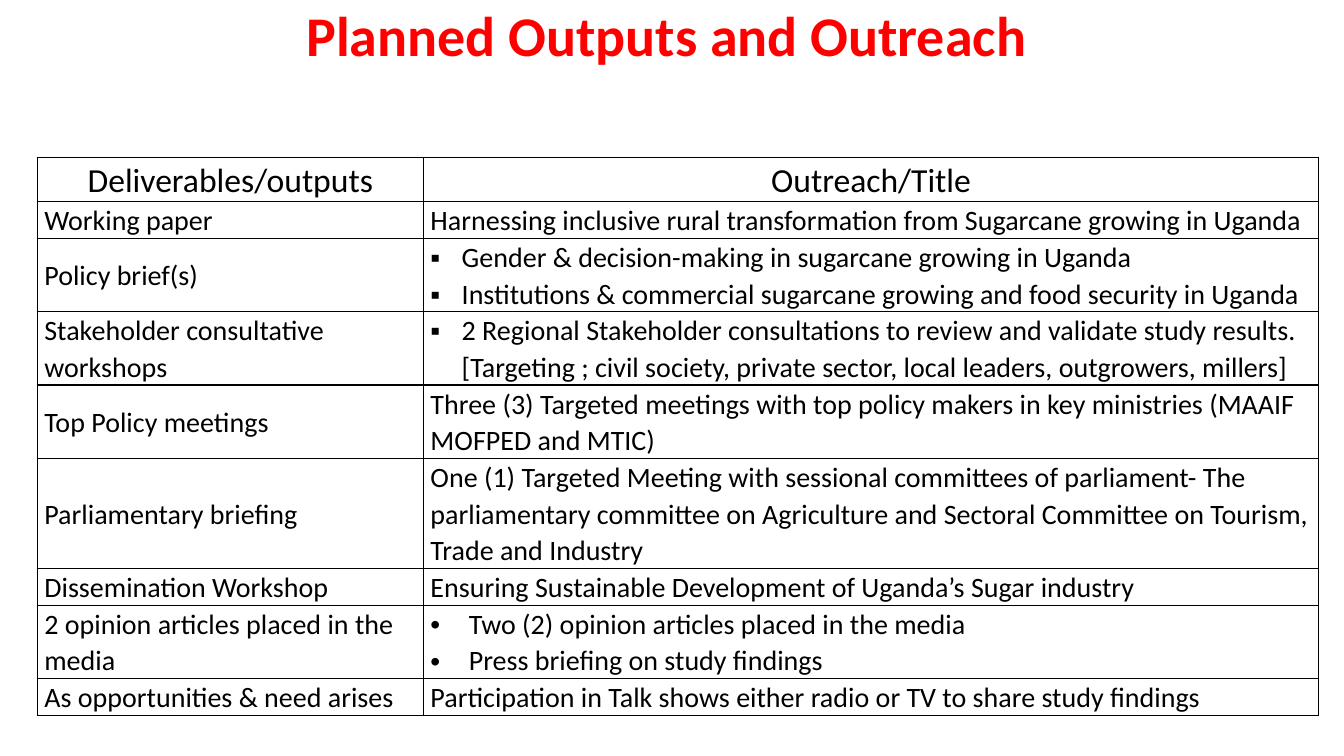
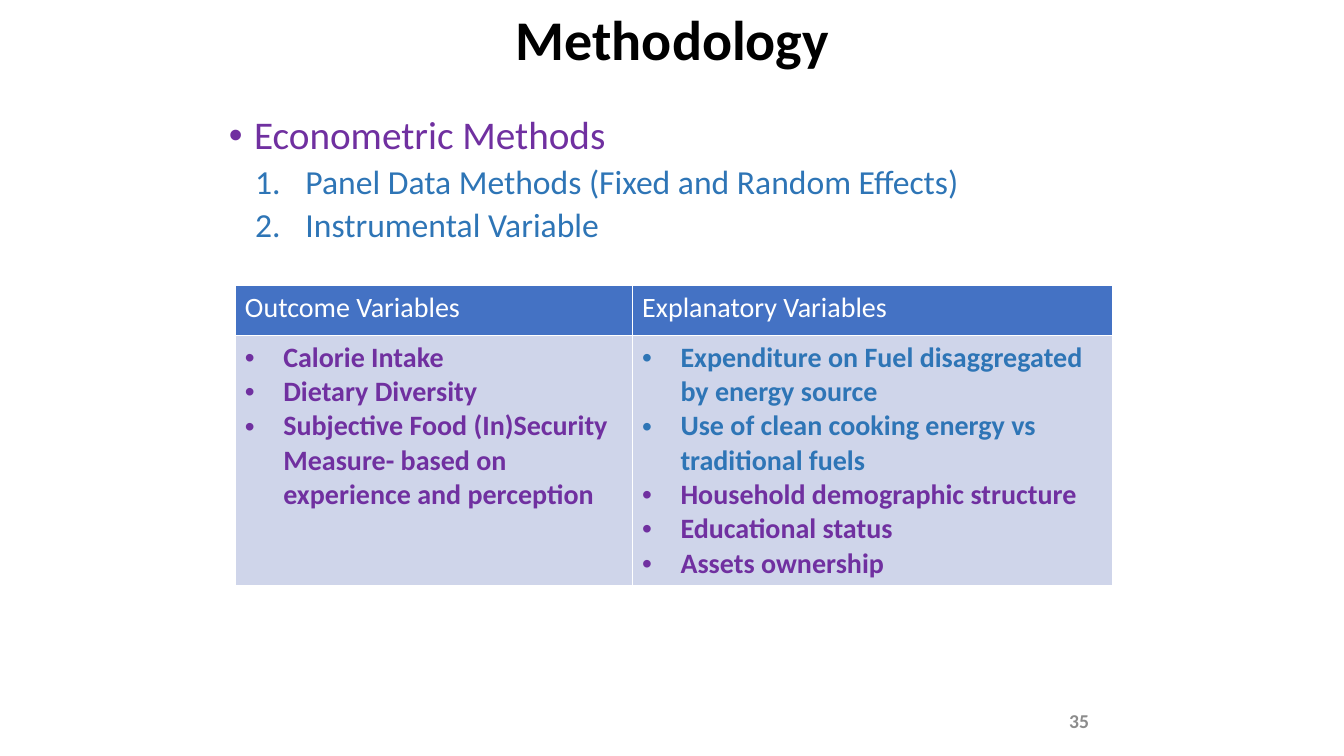
from dataclasses import dataclass

from lxml.etree import SubElement
from pptx import Presentation
from pptx.dml.color import RGBColor
from pptx.enum.text import MSO_ANCHOR, MSO_AUTO_SIZE, PP_ALIGN
from pptx.oxml.ns import qn
from pptx.util import Emu, Pt

EMU_PER_PX = 9144


@dataclass(frozen=True)
class Theme:
    font: str = "Calibri"
    black: str = "000000"
    white: str = "FFFFFF"
    red: str = "FF0000"
    purple: str = "7030A0"
    blue: str = "2E75B6"
    header_fill: str = "4472C4"
    body_fill: str = "CFD5EA"
    grey: str = "8C8C8C"
    title_size: int = 40
    list_size: int = 28
    heading_size: int = 24
    text_size: int = 20
    number_size: int = 14


THEME = Theme()


def px(length):
    return Emu(length * EMU_PER_PX)


def place(shape, left, top, width, height):
    shape.left, shape.top = px(left), px(top)
    shape.width, shape.height = px(width), px(height)


def set_bullet(para, bullet, indent, hanging):
    properties = para._p.get_or_add_pPr()
    properties.set("marL", str(px(indent)))
    properties.set("indent", str(px(-hanging)))
    if bullet == "1.":
        SubElement(properties, qn("a:buFont"), typeface="+mj-lt")
        SubElement(properties, qn("a:buAutoNum"), type="arabicPeriod")
    else:
        SubElement(properties, qn("a:buFont"), typeface="Arial")
        SubElement(properties, qn("a:buChar"), char=bullet)


def write_text(para, text, size=THEME.text_size, color=THEME.black, bold=False,
               align=PP_ALIGN.LEFT, spacing=1.0, before=0, level=0,
               bullet=None, indent=38, hanging=38):
    para.level = level
    para.alignment = align
    para.line_spacing = spacing
    para.space_before = Pt(before)
    if bullet:
        set_bullet(para, bullet, indent, hanging)
    span = para.add_run()
    span.text = text
    span.font.name = THEME.font
    span.font.size = Pt(size)
    span.font.bold = bold
    span.font.color.rgb = RGBColor.from_string(color)


def lines(*texts, **style):
    return [(text, style) for text in texts]


def fill_frame(frame, content):
    for index, (text, style) in enumerate(content):
        para = frame.add_paragraph() if index else frame.paragraphs[0]
        write_text(para, text, **style)


def add_page(deck, layout_name, title, color, box):
    page = deck.slides.add_slide(deck.slide_layouts.get_by_name(layout_name))
    heading = page.shapes.title
    place(heading, *box)
    frame = heading.text_frame
    frame.auto_size = MSO_AUTO_SIZE.NONE
    frame.vertical_anchor = MSO_ANCHOR.MIDDLE
    fill_frame(frame, lines(title, size=THEME.title_size, color=color, bold=True,
                            align=PP_ALIGN.CENTER, spacing=0.9))
    return page


def set_borders(cell, color):
    properties = cell._tc.get_or_add_tcPr()
    for side in ("a:lnL", "a:lnR", "a:lnT", "a:lnB"):
        line = SubElement(properties, qn(side), w=str(Pt(1)))
        solid = SubElement(line, qn("a:solidFill"))
        SubElement(solid, qn("a:srgbClr"), val=color)


def add_grid(page, left, top, widths, heights, rows, border, fills=None,
             anchor=MSO_ANCHOR.TOP, margins=(10, 5)):
    frame = page.shapes.add_table(len(rows), len(widths), px(left), px(top),
                                  px(sum(widths)), px(sum(heights)))
    table = frame.table
    table.first_row = table.horz_banding = False
    for column, width in zip(table.columns, widths):
        column.width = px(width)
    for row_index, (contents, height) in enumerate(zip(rows, heights)):
        table.rows[row_index].height = px(height)
        for column_index, content in enumerate(contents):
            cell = table.cell(row_index, column_index)
            set_borders(cell, border)
            if fills:
                cell.fill.solid()
                cell.fill.fore_color.rgb = RGBColor.from_string(fills[row_index])
            else:
                cell.fill.background()
            cell.vertical_anchor = anchor
            cell.margin_left = cell.margin_right = px(margins[0])
            cell.margin_top = cell.margin_bottom = px(margins[1])
            fill_frame(cell.text_frame, content)


def add_list(page, box, content):
    body = page.placeholders[1]
    place(body, *box)
    body.text_frame.auto_size = MSO_AUTO_SIZE.NONE
    fill_frame(body.text_frame, content)


def add_page_number(page, number):
    box = page.shapes.add_textbox(px(935), px(682), px(155), px(66))
    frame = box.text_frame
    frame.word_wrap = True
    frame.vertical_anchor = MSO_ANCHOR.MIDDLE
    fill_frame(frame, lines(number, size=THEME.number_size, color=THEME.grey,
                            bold=True, align=PP_ALIGN.RIGHT))


def build_outputs(deck):
    page = add_page(deck, "Title Only", "Planned Outputs and Outreach",
                    THEME.red, (86, 0, 1150, 76))
    plain = {"spacing": 1.07}
    heading = {**plain, "size": THEME.heading_size, "align": PP_ALIGN.CENTER}
    square = {**plain, "bullet": "▪", "indent": 31, "hanging": 31}
    dot = {**plain, "bullet": "•"}
    outputs = [
        ("Working paper", plain,
         ["Harnessing inclusive rural transformation from Sugarcane growing in Uganda"]),
        ("Policy brief(s)", square,
         ["Gender & decision-making in sugarcane growing in Uganda",
          "Institutions & commercial sugarcane growing and food security in Uganda"]),
        ("Stakeholder consultative workshops", square,
         ["2 Regional Stakeholder consultations to review and validate study results. "
          "[Targeting ; civil society, private sector, local leaders, outgrowers, millers]"]),
        ("Top Policy meetings", plain,
         ["Three (3) Targeted meetings with top policy makers in key ministries "
          "(MAAIF MOFPED and MTIC)"]),
        ("Parliamentary briefing", plain,
         ["One (1) Targeted Meeting with sessional committees of parliament- "
          "The parliamentary committee on Agriculture and Sectoral Committee on Tourism, "
          "Trade and Industry"]),
        ("Dissemination Workshop", plain,
         ["Ensuring Sustainable Development of Uganda’s Sugar industry"]),
        ("2 opinion articles placed in the media", dot,
         ["Two (2) opinion articles placed in the media",
          "Press briefing on study findings"]),
        ("As opportunities & need arises", plain,
         ["Participation in Talk shows either radio or TV to share study findings"]),
    ]
    rows = [[lines("Deliverables/outputs", **heading), lines("Outreach/Title", **heading)]]
    rows += [[lines(label, **plain), lines(*texts, **style)]
             for label, style, texts in outputs]
    line_counts = (1, 2, 2, 2, 3, 1, 2, 1)
    heights = [44] + [36 * count for count in line_counts]
    add_grid(page, 37, 156, (383, 888), heights, rows, THEME.black,
             anchor=MSO_ANCHOR.MIDDLE, margins=(7, 0))


def build_methodology(deck):
    page = add_page(deck, "Title and Content", "Methodology",
                    THEME.black, (217, 16, 900, 53))
    methods = lines("Econometric Methods", size=THEME.list_size, color=THEME.purple,
                    spacing=0.9, before=10, bullet="•", indent=25, hanging=25)
    methods += lines("Panel Data Methods (Fixed and Random Effects)",
                     "Instrumental Variable", size=THEME.heading_size,
                     color=THEME.blue, spacing=0.9, before=5, level=1,
                     bullet="1.", indent=76, hanging=50)
    add_list(page, (217, 110, 925, 620), methods)
    add_page_number(page, "35")
    purple = {"color": THEME.purple, "bold": True, "bullet": "•"}
    blue = {**purple, "color": THEME.blue}
    outcomes = lines("Calorie Intake", "Dietary Diversity",
                     "Subjective Food (In)Security Measure- based on "
                     "experience and perception", **purple)
    explanatory = lines("Expenditure on Fuel disaggregated by energy source",
                        "Use of clean cooking energy vs traditional fuels", **blue)
    explanatory += lines("Household demographic structure", "Educational status",
                         "Assets ownership", **purple)
    headings = [lines(text, color=THEME.white)
                for text in ("Outcome Variables", "Explanatory Variables")]
    add_grid(page, 233, 283, (394, 477), (50, 248), [headings, [outcomes, explanatory]],
             THEME.white, fills=(THEME.header_fill, THEME.body_fill))


def main():
    deck = Presentation()
    deck.slide_width, deck.slide_height = px(1333), px(750)
    build_outputs(deck)
    build_methodology(deck)
    deck.save("out.pptx")


if __name__ == "__main__":
    main()
